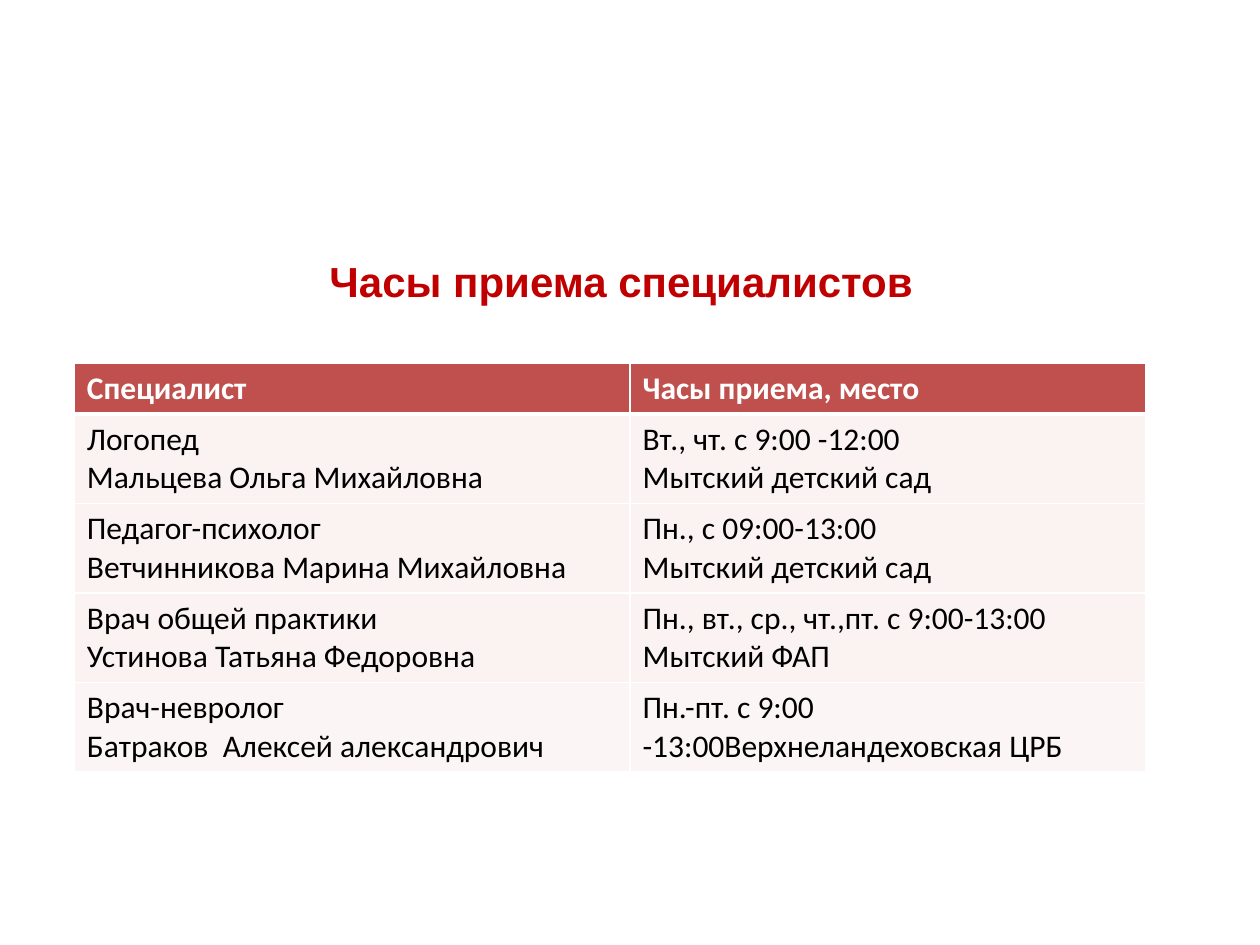
from lxml.etree import SubElement
from pptx import Presentation
from pptx.dml.color import RGBColor as RGB
from pptx.enum.text import MSO_ANCHOR, MSO_AUTO_SIZE, PP_ALIGN
from pptx.oxml.ns import qn
from pptx.util import Inches, Pt

TITLE = "Часы приема специалистов"
HEAD = ("Специалист", "Часы приема, место")
# Each row: specialist, hours and place, fill opacity in percent
ROWS = [
    ("Логопед\nМальцева Ольга Михайловна",
     "Вт., чт. с 9:00 -12:00\nМытский детский сад", 5),
    ("Педагог-психолог\nВетчинникова Марина Михайловна",
     "Пн., с 09:00-13:00\nМытский детский сад", 5),
    ("Врач общей практики\nУстинова Татьяна Федоровна",
     "Пн., вт., ср., чт.,пт. с 9:00-13:00 Мытский ФАП", 5),
    ("Врач-невролог\nБатраков  Алексей александрович",
     "Пн.-пт. с 9:00 -13:00Верхнеландеховская ЦРБ", 4),
]
COLORS = {"red": "C00000", "head": "C0504D", "white": "FFFFFF", "black": "000000"}
WIDTHS = (4.41, 4.09)
HEAD_H, ROW_H = 0.4, 0.71


def color(name):
    return RGB.from_string(COLORS[name])


def style(para, font, size, tint, bold):
    para.font.name = font
    para.font.size = Pt(size)
    para.font.bold = bold
    para.font.color.rgb = color(tint)


def edge(cell, base):
    """Draw white borders; base is the width of the lower one in points."""
    props = cell._tc.get_or_add_tcPr()
    sides = (("lnL", 1), ("lnR", 1), ("lnT", 1), ("lnB", base))
    for i, (side, width) in enumerate(sides):
        line = SubElement(props, qn(f"a:{side}"), w=str(Pt(width)))
        fill = SubElement(line, qn("a:solidFill"))
        SubElement(fill, qn("a:srgbClr"), val=COLORS["white"])
        props.insert(i, line)


def fill_cell(cell, text, back, tint, bold, alpha=100, base=1):
    cell.text = text
    for para in cell.text_frame.paragraphs:
        style(para, "Calibri", 18, tint, bold)
    cell.fill.solid()
    cell.fill.fore_color.rgb = color(back)
    if alpha < 100:
        shade = cell._tc.tcPr.find(f".//{qn('a:srgbClr')}")
        SubElement(shade, qn("a:alpha"), val=str(alpha * 1000))
    edge(cell, base)


def add_title(slide):
    title = slide.shapes.title
    title.left, title.top = Inches(0.43), Inches(1.39)
    title.width, title.height = Inches(9), Inches(1.25)
    frame = title.text_frame
    frame.text = TITLE
    frame.word_wrap = True
    frame.auto_size = MSO_AUTO_SIZE.NONE
    frame.vertical_anchor = MSO_ANCHOR.MIDDLE
    frame.margin_top = Inches(0.48)
    para = frame.paragraphs[0]
    para.alignment = PP_ALIGN.CENTER
    style(para, "Arial", 24, "red", True)


def add_hours(slide):
    count = len(ROWS)
    table = slide.shapes.add_table(
        count + 1, len(HEAD), Inches(0.59), Inches(2.88),
        Inches(sum(WIDTHS)), Inches(HEAD_H + count * ROW_H)).table
    for col, width in zip(table.columns, WIDTHS):
        col.width = Inches(width)
    for row, height in zip(table.rows, [HEAD_H] + [ROW_H] * count):
        row.height = Inches(height)
    for c, text in enumerate(HEAD):
        fill_cell(table.cell(0, c), text, "head", "white", True, base=3)
    for r, (*texts, alpha) in enumerate(ROWS, 1):
        for c, text in enumerate(texts):
            fill_cell(table.cell(r, c), text, "red", "black", False, alpha)


def main():
    deck = Presentation()
    deck.slide_width, deck.slide_height = Inches(10), Inches(7.5)
    slide = deck.slides.add_slide(deck.slide_layouts[5])
    add_title(slide)
    add_hours(slide)
    deck.save("out.pptx")


if __name__ == "__main__":
    main()
